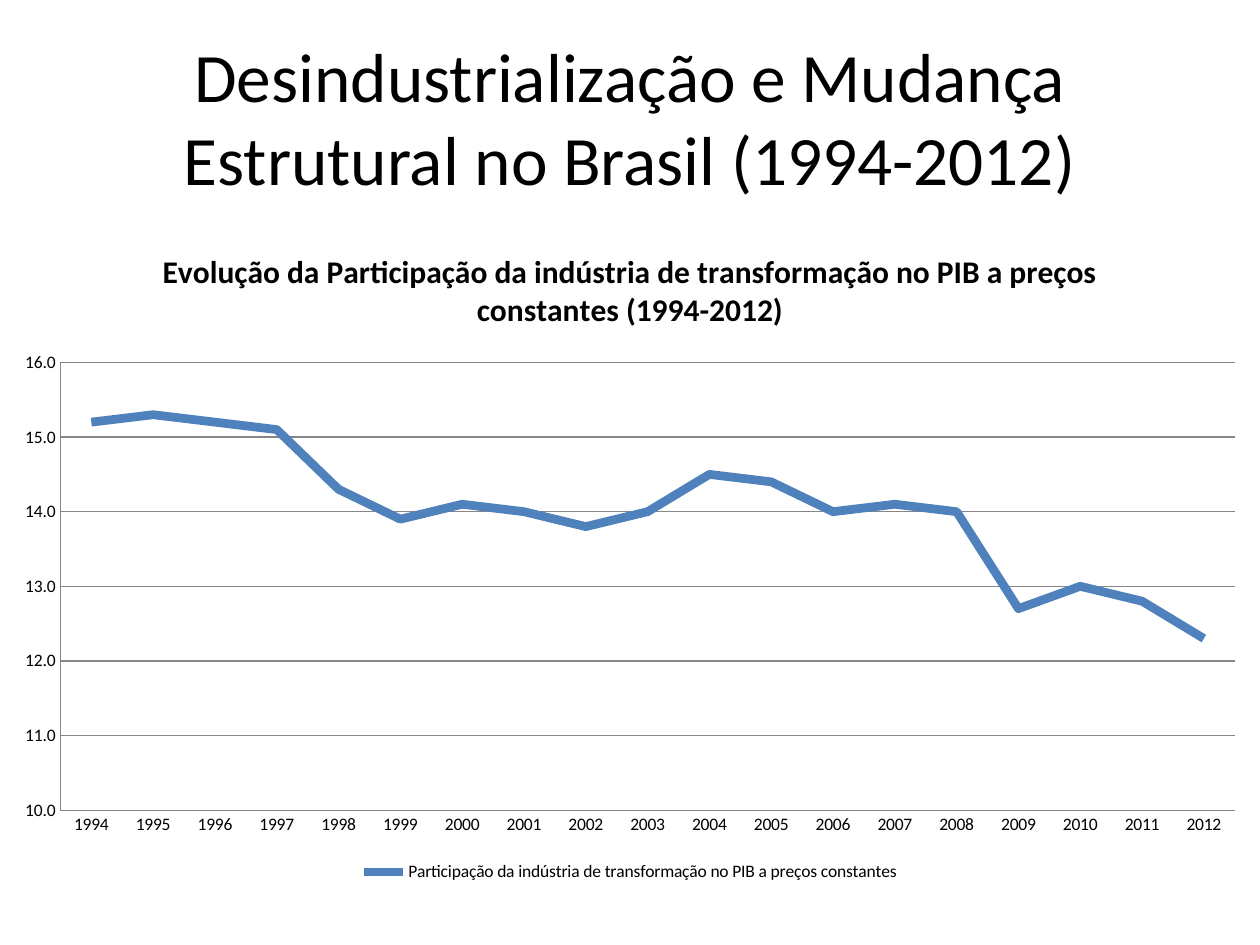
from dataclasses import dataclass

from pptx import Presentation
from pptx import util as u
from pptx.chart.data import CategoryChartData
from pptx.dml.color import RGBColor
from pptx.enum import chart as ch
from pptx.enum import text


@dataclass(frozen=True)
class Theme:
    font: str = "Calibri"
    ink: RGBColor = RGBColor(0x00, 0x00, 0x00)
    grid: RGBColor = RGBColor(0x86, 0x86, 0x86)
    industry: RGBColor = RGBColor(0x4F, 0x81, 0xBD)
    heading_size: float = 39.6
    chart_title_size: float = 18
    label_size: float = 10
    series_width: float = 5
    rule_width: float = 0.75


THEME = Theme()

HEADING = "Desindustrialização e Mudança Estrutural no Brasil (1994-2012)"
INDICATOR = "Participação da indústria de transformação no PIB a preços constantes"
YEARS = [str(year) for year in range(1994, 2013)]
SHARES = [15.2, 15.3, 15.2, 15.1, 14.3, 13.9, 14.1, 14, 13.8, 14,
          14.5, 14.4, 14, 14.1, 14, 12.7, 13, 12.8, 12.3]


def style_font(font, size, bold=False):
    font.name = THEME.font
    font.size = u.Pt(size)
    font.bold = bold
    font.color.rgb = THEME.ink


def style_line(line, color, width):
    line.color.rgb = color
    line.width = u.Pt(width)


def add_heading(slide):
    heading = slide.shapes.add_textbox(
        u.Inches(0.5), u.Inches(0.3), u.Inches(9), u.Inches(1.25))
    frame = heading.text_frame
    frame.word_wrap = True
    frame.vertical_anchor = text.MSO_ANCHOR.MIDDLE
    line = frame.paragraphs[0]
    line.alignment = text.PP_ALIGN.CENTER
    words = line.add_run()
    words.text = HEADING
    style_font(words.font, THEME.heading_size)


def add_share_chart(slide):
    # Data
    shares = CategoryChartData(number_format="0.0")
    shares.categories = YEARS
    shares.add_series(INDICATOR, SHARES)
    chart = slide.shapes.add_chart(
        ch.XL_CHART_TYPE.LINE, u.Inches(0), u.Inches(1.78),
        u.Inches(10), u.Inches(5.26), shares).chart
    style_font(chart.font, THEME.label_size)

    # Chart title
    chart.has_title = True
    caption = chart.chart_title.text_frame.paragraphs[0].add_run()
    caption.text = f"Evolução da {INDICATOR} (1994-2012)"
    style_font(caption.font, THEME.chart_title_size, bold=True)
    chart.chart_title.include_in_layout = False

    # Legend
    chart.has_legend = True
    chart.legend.position = ch.XL_LEGEND_POSITION.BOTTOM
    chart.legend.include_in_layout = False

    # Axes
    years, percent = chart.category_axis, chart.value_axis
    for axis in (years, percent):
        axis.major_tick_mark = ch.XL_TICK_MARK.NONE
        axis.minor_tick_mark = ch.XL_TICK_MARK.NONE
        style_line(axis.format.line, THEME.grid, THEME.rule_width)
    percent.minimum_scale = 10
    percent.maximum_scale = 16
    percent.major_unit = 1
    percent.has_major_gridlines = True
    style_line(percent.major_gridlines.format.line, THEME.grid, THEME.rule_width)
    percent.tick_labels.number_format = "#,##0.0"
    percent.tick_labels.number_format_is_linked = False

    # Series
    plot = chart.plots[0]
    plot.vary_by_categories = False
    industry = plot.series[0]
    industry.smooth = False
    industry.marker.style = ch.XL_MARKER_STYLE.NONE
    style_line(industry.format.line, THEME.industry, THEME.series_width)


def main():
    deck = Presentation()
    deck.slide_width, deck.slide_height = u.Inches(10), u.Inches(7.5)
    slide = deck.slides.add_slide(deck.slide_layouts[6])
    add_heading(slide)
    add_share_chart(slide)
    deck.save("out.pptx")


if __name__ == "__main__":
    main()
